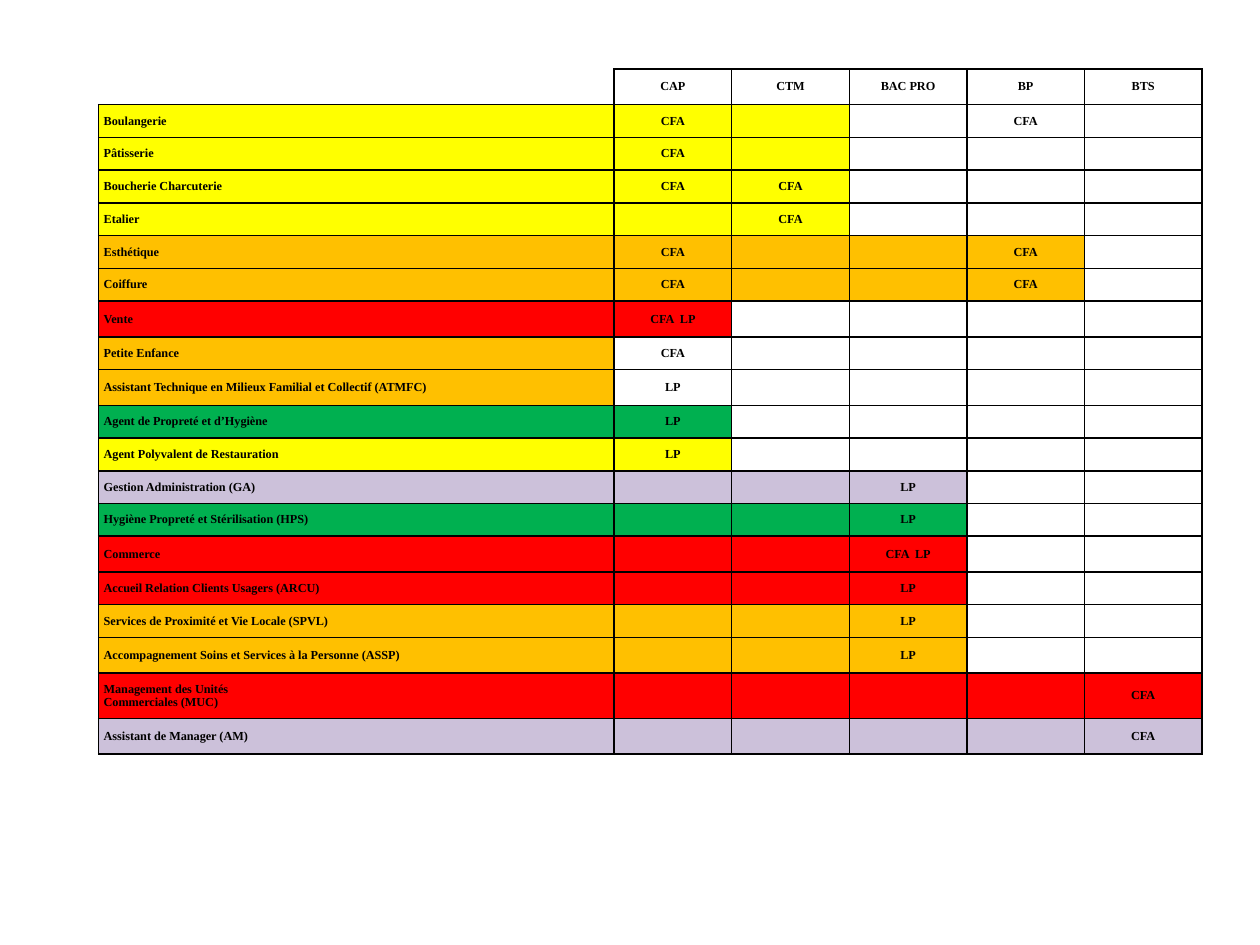
from lxml import etree
from pptx import Presentation
from pptx import util as u
from pptx.dml.color import RGBColor
from pptx.enum import text
from pptx.oxml import ns

BLACK = RGBColor(0x00, 0x00, 0x00)
WHITE = RGBColor(0xFF, 0xFF, 0xFF)
YELLOW = RGBColor(0xFF, 0xFF, 0x00)
ORANGE = RGBColor(0xFF, 0xC0, 0x00)
RED = RGBColor(0xFF, 0x00, 0x00)
GREEN = RGBColor(0x00, 0xB0, 0x50)
LILAC = RGBColor(0xCC, 0xC1, 0xDA)

DIPLOMAS = ["CAP", "CTM", "BAC PRO", "BP", "BTS"]
# label, colour, number of coloured cells, schools by diploma
TRAININGS = [
    ("Boulangerie", YELLOW, 3, {"CAP": "CFA", "BP": "CFA"}),
    ("Pâtisserie", YELLOW, 3, {"CAP": "CFA"}),
    ("Boucherie Charcuterie", YELLOW, 3, {"CAP": "CFA", "CTM": "CFA"}),
    ("Etalier", YELLOW, 3, {"CTM": "CFA"}),
    ("Esthétique", ORANGE, 5, {"CAP": "CFA", "BP": "CFA"}),
    ("Coiffure", ORANGE, 5, {"CAP": "CFA", "BP": "CFA"}),
    ("Vente", RED, 2, {"CAP": "CFA  LP"}),
    ("Petite Enfance", ORANGE, 1, {"CAP": "CFA"}),
    ("Assistant Technique en Milieux Familial et Collectif (ATMFC)", ORANGE, 1, {"CAP": "LP"}),
    ("Agent de Propreté et d’Hygiène", GREEN, 2, {"CAP": "LP"}),
    ("Agent Polyvalent de Restauration", YELLOW, 2, {"CAP": "LP"}),
    ("Gestion Administration (GA)", LILAC, 4, {"BAC PRO": "LP"}),
    ("Hygiène Propreté et Stérilisation (HPS)", GREEN, 4, {"BAC PRO": "LP"}),
    ("Commerce", RED, 4, {"BAC PRO": "CFA  LP"}),
    ("Accueil Relation Clients Usagers (ARCU)", RED, 4, {"BAC PRO": "LP"}),
    ("Services de Proximité et Vie Locale (SPVL)", ORANGE, 4, {"BAC PRO": "LP"}),
    ("Accompagnement Soins et Services à la Personne (ASSP)", ORANGE, 4, {"BAC PRO": "LP"}),
    ("Management des Unités\nCommerciales (MUC)", RED, 6, {"BTS": "CFA"}),
    ("Assistant de Manager (AM)", LILAC, 6, {"BTS": "CFA"}),
]

LEFT, TOP = 1.99, 1.39
LABEL_WIDTH, DIPLOMA_WIDTH = 10.39, 2.37
ROW_HEIGHT = 0.66
TALL_ROWS = {0: 0.72, 7: 0.72, 9: 0.72, 14: 0.72, 17: 0.72, 18: 0.91, 19: 0.72}

FONT = {"name": "Times New Roman", "size": u.Pt(7), "bold": True}
CELL = {
    "vertical_anchor": text.MSO_ANCHOR.MIDDLE,
    "margin_left": u.Cm(0.1),
    "margin_right": u.Cm(0.1),
    "margin_top": 0,
    "margin_bottom": 0,
}
PLAIN_TABLE = {"first_row": False, "horz_banding": False}


def set_attributes(target, values):
    for name, value in values.items():
        setattr(target, name, value)


def draw_borders(cell, visible_sides):
    properties = cell._tc.get_or_add_tcPr()
    for side in "LRTB":
        line = etree.SubElement(properties, ns.qn(f"a:ln{side}"), w=str(u.Pt(1)))
        if side in visible_sides:
            fill = etree.SubElement(line, ns.qn("a:solidFill"))
            etree.SubElement(fill, ns.qn("a:srgbClr"), val=str(BLACK))
        else:
            etree.SubElement(line, ns.qn("a:noFill"))


def format_cell(cell, content, color, alignment, visible_sides):
    draw_borders(cell, visible_sides)
    set_attributes(cell, CELL)
    cell.fill.solid()
    cell.fill.fore_color.rgb = color
    if not content:
        paragraph = cell.text_frame.paragraphs[0]
        etree.SubElement(paragraph._p, ns.qn("a:endParaRPr"), sz=str(FONT["size"].centipoints))
        return
    cell.text = content
    for paragraph in cell.text_frame.paragraphs:
        paragraph.alignment = alignment
        for run in paragraph.runs:
            set_attributes(run.font, FONT)
            run.font.color.rgb = BLACK


def main():
    presentation = Presentation()
    presentation.slide_width, presentation.slide_height = u.Cm(25.4), u.Cm(19.05)
    slide = presentation.slides.add_slide(presentation.slide_layouts[6])

    rows = [([""] + DIPLOMAS, WHITE, 0)]
    for label, color, colored, schools in TRAININGS:
        rows.append(([label] + [schools.get(diploma, "") for diploma in DIPLOMAS], color, colored))
    widths = [LABEL_WIDTH] + [DIPLOMA_WIDTH] * len(DIPLOMAS)
    heights = [TALL_ROWS.get(index, ROW_HEIGHT) for index in range(len(rows))]

    shape = slide.shapes.add_table(
        len(rows), len(widths), u.Cm(LEFT), u.Cm(TOP), u.Cm(sum(widths)), u.Cm(sum(heights))
    )
    table = shape.table
    set_attributes(table, PLAIN_TABLE)
    for column, width in zip(table.columns, widths):
        column.width = u.Cm(width)
    for row, height in zip(table.rows, heights):
        row.height = u.Cm(height)

    for row_index, (contents, color, colored) in enumerate(rows):
        for column_index, content in enumerate(contents):
            format_cell(
                table.cell(row_index, column_index),
                content,
                color if column_index < colored else WHITE,
                text.PP_ALIGN.CENTER if column_index else text.PP_ALIGN.LEFT,
                "LRTB" if row_index or column_index else "RB",
            )

    presentation.save("out.pptx")


if __name__ == "__main__":
    main()
